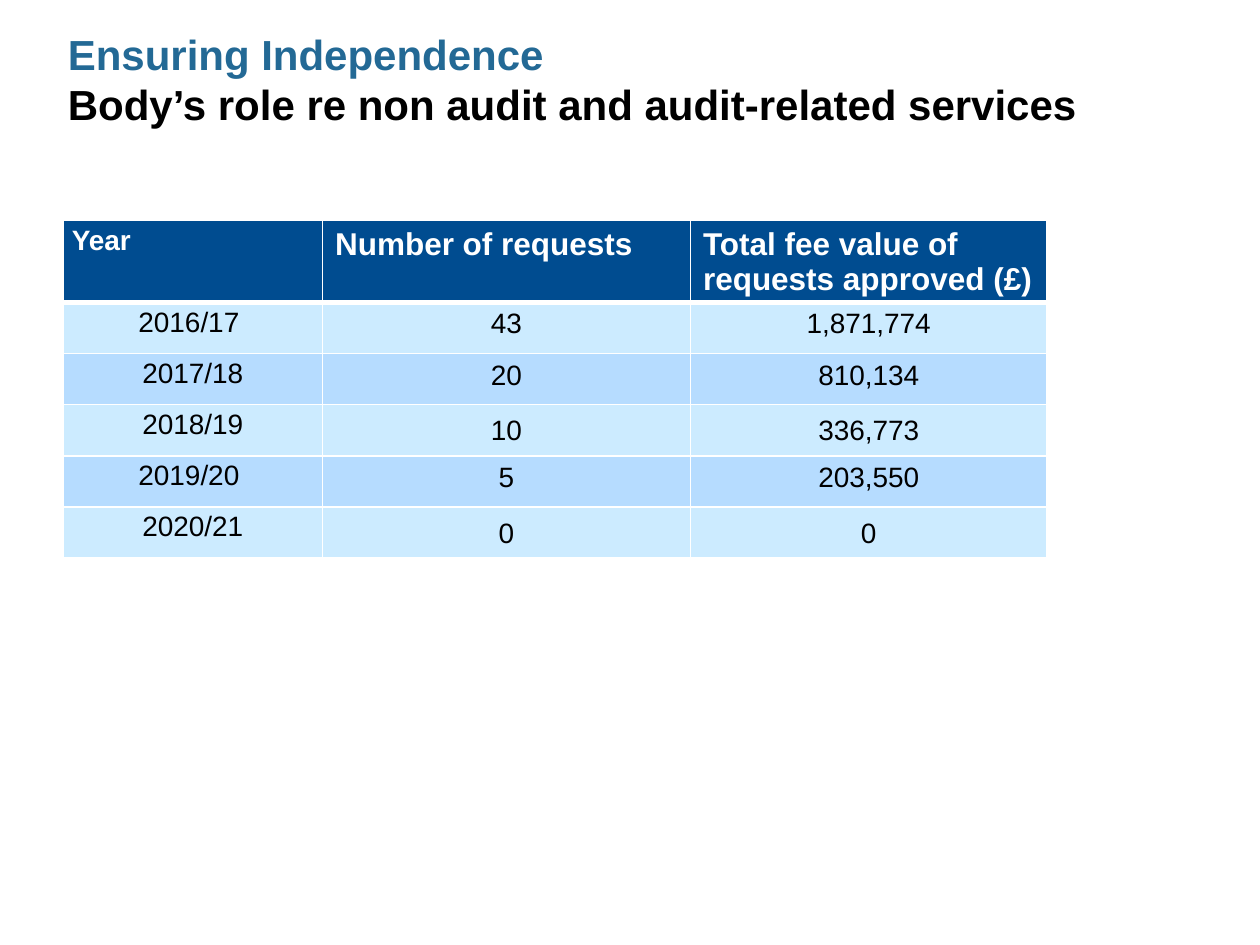
from lxml import etree
from pptx import Presentation
from pptx.dml.color import RGBColor
from pptx.enum import text
from pptx.oxml import ns
from pptx.util import Inches, Pt

BLUE = RGBColor(0x23, 0x69, 0x95)
NAVY = RGBColor(0x00, 0x4C, 0x90)
LIGHT = RGBColor(0xCC, 0xEB, 0xFF)
MID = RGBColor(0xB6, 0xDC, 0xFF)
WHITE = RGBColor(0xFF, 0xFF, 0xFF)
BLACK = RGBColor(0x00, 0x00, 0x00)

HEADINGS = ("Year", "Number of requests", "Total fee value of requests approved (£)")
REQUESTS = (
    ("2016/17 ", "43", "1,871,774"),
    ("2017/18", "20", "810,134"),
    ("2018/19", "10", "336,773"),
    ("2019/20 ", "5", "203,550"),
    ("2020/21", "0", "0"),
)
LOOSE_YEARS = ("2018/19", "2020/21")
COLUMN_WIDTHS = (2.06, 2.92, 2.83)
HEADER_HEIGHT = 0.65
BODY_HEIGHT = 2.03


def add_text(paragraph, wording, size=16, color=BLACK, bold=False, align=None, spacing=None):
    """Append a formatted run to a paragraph."""
    paragraph.alignment = align
    paragraph.line_spacing = spacing
    run = paragraph.add_run()
    run.text = wording
    run.font.name = "Arial"
    run.font.size = Pt(size)
    run.font.bold = bold
    run.font.color.rgb = color


def set_borders(cell, bottom=1):
    """Draw white borders round a cell, inserted ahead of its fill."""
    properties = cell._tc.get_or_add_tcPr()
    widths = {"lnL": 1, "lnR": 1, "lnT": 1, "lnB": bottom}
    for position, (side, width) in enumerate(widths.items()):
        line = etree.Element(ns.qn(f"a:{side}"), w=str(Pt(width)))
        fill = etree.SubElement(line, ns.qn("a:solidFill"))
        etree.SubElement(fill, ns.qn("a:srgbClr"), val=str(WHITE))
        properties.insert(position, line)


def fill_cell(cell, wording, fill, narrow=False, bottom=1, **text_format):
    """Set the text, fill, margins and borders of a cell."""
    cell.fill.solid()
    cell.fill.fore_color.rgb = fill
    cell.margin_bottom = 0
    if narrow:
        cell.margin_left = cell.margin_right = Inches(0.07)
        cell.margin_top = 0
    set_borders(cell, bottom)
    add_text(cell.text_frame.paragraphs[0], wording, **text_format)


def add_title(slide):
    """Add the two-line title."""
    box = slide.shapes.add_textbox(Inches(0.44), 0, Inches(9), Inches(1.25))
    frame = box.text_frame
    frame.word_wrap = True
    frame.vertical_anchor = text.MSO_ANCHOR.MIDDLE
    paragraph = frame.paragraphs[0]
    add_text(paragraph, "Ensuring Independence", size=24, color=BLUE, bold=True)
    paragraph.add_line_break()
    add_text(paragraph, "Body’s role re non audit and audit-related services", size=24, bold=True)


def add_requests_table(slide):
    """Add the table of requests by year."""
    table = slide.shapes.add_table(
        len(REQUESTS) + 1, len(HEADINGS), Inches(0.5), Inches(1.75),
        Inches(sum(COLUMN_WIDTHS)), Inches(HEADER_HEIGHT + BODY_HEIGHT)).table
    table.horz_banding = False
    for column, width in zip(table.columns, COLUMN_WIDTHS):
        column.width = Inches(width)
    for index, row in enumerate(table.rows):
        row.height = Inches(BODY_HEIGHT / len(REQUESTS) if index else HEADER_HEIGHT)

    for column, heading in enumerate(HEADINGS):
        first = column == 0
        fill_cell(table.cell(0, column), heading, NAVY, narrow=first, bottom=3,
                  size=16 if first else 18, color=WHITE, bold=True,
                  spacing=1.15 if first else None)
    for row, values in enumerate(REQUESTS, start=1):
        for column, value in enumerate(values):
            first = column == 0
            loose = first or values[0] in LOOSE_YEARS
            fill_cell(table.cell(row, column), value, LIGHT if row % 2 else MID,
                      narrow=first, align=text.PP_ALIGN.CENTER,
                      spacing=1.15 if loose else None)


def main():
    """Build and save the presentation."""
    presentation = Presentation()
    presentation.slide_width = Inches(10)
    presentation.slide_height = Inches(7.5)
    slide = presentation.slides.add_slide(presentation.slide_layouts[6])
    add_title(slide)
    add_requests_table(slide)
    presentation.save("out.pptx")


if __name__ == "__main__":
    main()
